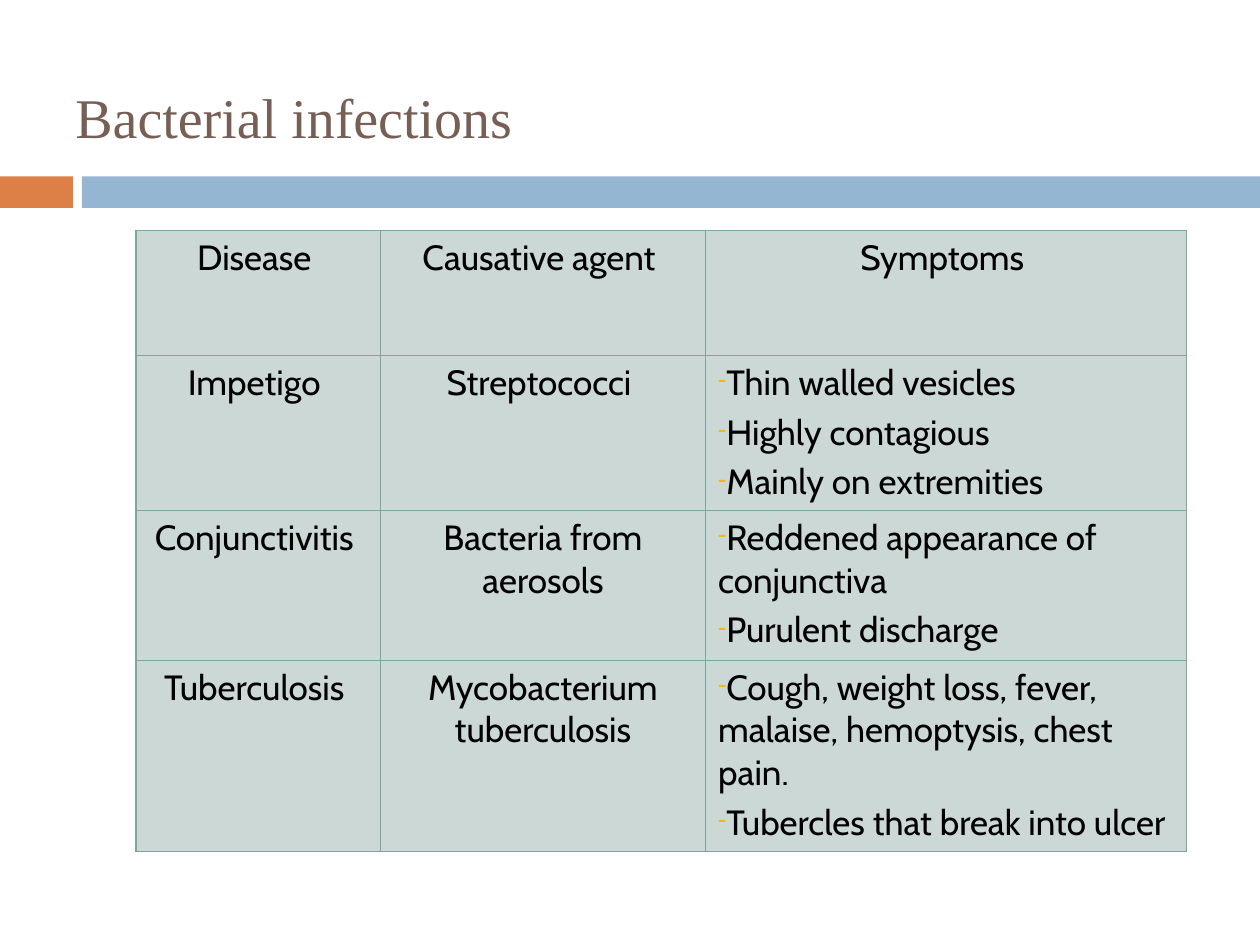
from dataclasses import dataclass

from lxml import etree
from pptx import Presentation
from pptx import util as u
from pptx.dml.color import RGBColor
from pptx.enum import shapes, text
from pptx.oxml import ns

WIDTH, HEIGHT = u.Inches(10), u.Inches(7.5)
COLORS = {
    "orange": "DD8047",
    "blue": "94B6D2",
    "title": "775F55",
    "cell": "CCD8D5",
    "border": "7BA79D",
    "bullet": "F7B615",
    "text": "000000",
}
COLUMNS = (1.94, 2.58, 3.82)
ROWS = (0.99, 1.23, 1.19, 1.52)


@dataclass(frozen=True)
class Area:
    left: float
    top: float
    width: float
    height: float

    def lengths(self) -> tuple[int, int, int, int]:
        return (int(self.left * WIDTH), int(self.top * HEIGHT),
                int(self.width * WIDTH), int(self.height * HEIGHT))


@dataclass(frozen=True)
class Bar:
    left: float
    width: float
    color: str


@dataclass(frozen=True)
class Infection:
    disease: str
    agent: str
    symptoms: tuple[str, ...]


BARS = (Bar(0, 0.058, "orange"), Bar(0.065, 0.935, "blue"))
HEADINGS = ("Disease ", "Causative agent ", "Symptoms ")
INFECTIONS = (
    Infection("Impetigo ", "Streptococci ",
              ("Thin walled vesicles", "Highly contagious", "Mainly on extremities")),
    Infection("Conjunctivitis ", "Bacteria from aerosols",
              ("Reddened appearance of conjunctiva", "Purulent discharge")),
    Infection("Tuberculosis ", "Mycobacterium tuberculosis",
              ("Cough, weight loss, fever, malaise, hemoptysis, chest pain.",
               "Tubercles that break into ulcer")),
)


def rgb(name: str) -> RGBColor:
    return RGBColor.from_string(COLORS[name])


def add_child(parent, tag: str, **attributes: str):
    return etree.SubElement(parent, ns.qn(tag), attributes)


def style_font(para, name: str, size: int, color: str) -> None:
    para.font.name = name
    para.font.size = u.Pt(size)
    para.font.color.rgb = rgb(color)


def draw_bar(page, bar: Bar) -> None:
    area = Area(bar.left, 1.4 / 7.5, bar.width, 0.25 / 7.5)
    box = page.shapes.add_shape(shapes.MSO_SHAPE.RECTANGLE, *area.lengths())
    box.shadow.inherit = False
    box.fill.solid()
    box.fill.fore_color.rgb = rgb(bar.color)
    box.line.fill.background()


def draw_title(page, wording: str) -> None:
    box = page.shapes.add_textbox(*Area(0.05, 0.04, 0.9, 1.25 / 7.5).lengths())
    frame = box.text_frame
    frame.word_wrap = True
    frame.vertical_anchor = text.MSO_ANCHOR.MIDDLE
    para = frame.paragraphs[0]
    para.text = wording
    style_font(para, "Times New Roman", 32, "title")


def add_bullet(para) -> None:
    properties = para._p.get_or_add_pPr()
    color = add_child(properties, "a:buClr")
    add_child(color, "a:srgbClr", val=COLORS["bullet"])
    add_child(properties, "a:buSzPct", val="70000")
    add_child(properties, "a:buChar", char="-")


def add_borders(cell) -> None:
    properties = cell._tc.get_or_add_tcPr()
    for side in ("a:lnL", "a:lnR", "a:lnT", "a:lnB"):
        line = add_child(properties, side, w=str(u.Pt(0.79)))
        fill = add_child(line, "a:solidFill")
        add_child(fill, "a:srgbClr", val=COLORS["border"])


def fill_cell(cell, lines: tuple[str, ...], bulleted: bool) -> None:
    add_borders(cell)
    cell.fill.solid()
    cell.fill.fore_color.rgb = rgb("cell")
    cell.text_frame.text = "\n".join(lines)
    for para in cell.text_frame.paragraphs:
        para.space_before = u.Pt(4)
        style_font(para, "Cabin", 20, "text")
        if bulleted:
            add_bullet(para)
        else:
            para.alignment = text.PP_ALIGN.CENTER


def draw_table(page) -> None:
    area = Area(0.108, 1.83 / 7.5, sum(COLUMNS) / 10, sum(ROWS) / 7.5)
    table = page.shapes.add_table(len(ROWS), len(COLUMNS), *area.lengths()).table
    for column, width in zip(table.columns, COLUMNS):
        column.width = u.Inches(width)
    for row, height in zip(table.rows, ROWS):
        row.height = u.Inches(height)
    for index, heading in enumerate(HEADINGS):
        fill_cell(table.cell(0, index), (heading,), False)
    for index, infection in enumerate(INFECTIONS, start=1):
        fill_cell(table.cell(index, 0), (infection.disease,), False)
        fill_cell(table.cell(index, 1), (infection.agent,), False)
        fill_cell(table.cell(index, 2), infection.symptoms, True)


def main() -> None:
    deck = Presentation()
    deck.slide_width, deck.slide_height = WIDTH, HEIGHT
    page = deck.slides.add_slide(deck.slide_layouts[6])
    for bar in BARS:
        draw_bar(page, bar)
    draw_title(page, "Bacterial infections")
    draw_table(page)
    deck.save("out.pptx")


if __name__ == "__main__":
    main()
